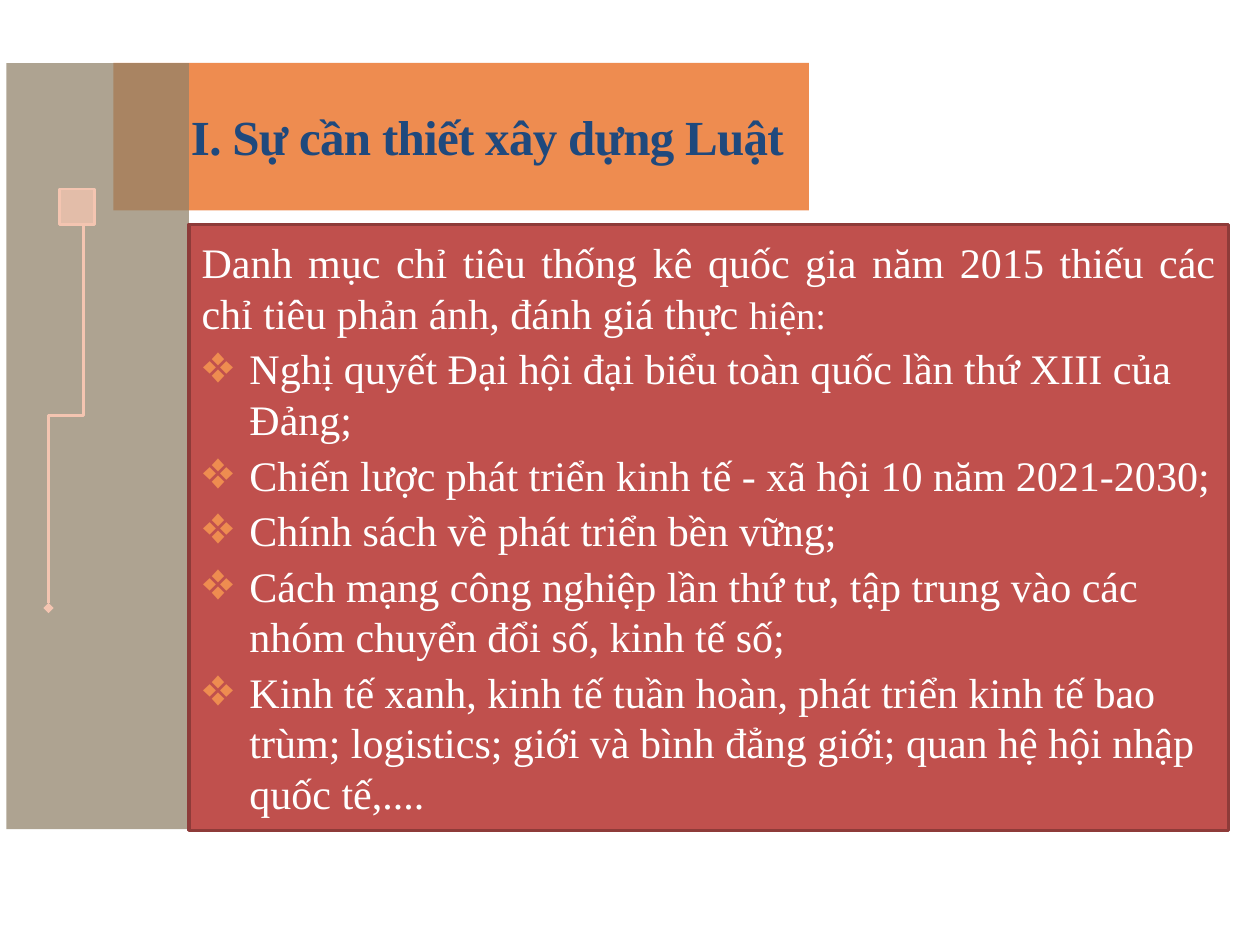
from lxml import etree
from pptx import Presentation
from pptx.dml.color import RGBColor
from pptx.enum.shapes import MSO_CONNECTOR, MSO_SHAPE
from pptx.enum.text import MSO_ANCHOR, MSO_AUTO_SIZE, PP_ALIGN
from pptx.oxml.ns import qn
from pptx.util import Inches, Pt

RECT, ELBOW = MSO_SHAPE.RECTANGLE, MSO_CONNECTOR.ELBOW
MIDDLE, NO_FIT = MSO_ANCHOR.MIDDLE, MSO_AUTO_SIZE.NONE
LEFT, RIGHT, JUSTIFY = PP_ALIGN.LEFT, PP_ALIGN.RIGHT, PP_ALIGN.JUSTIFY

COLORS = {
    "orange": "EE8C50",
    "taupe": "908269",
    "peach": "F4C5B1",
    "red": "C0504D",
    "dark_red": "8E3B39",
    "navy": "1F497D",
    "white": "FFFFFF",
}
FONT = "Times New Roman"
INDENT = 0.38

TITLE = "I. Sự cần thiết xây dựng Luật "
INTRO = [
    ("Danh mục chỉ tiêu thống kê quốc gia năm 2015 thiếu các chỉ tiêu "
     "phản ánh, đánh giá thực ", 24),
    ("hiện:", 22),
]
ITEMS = [
    "Nghị quyết Đại hội đại biểu toàn quốc lần thứ XIII của Đảng;",
    "Chiến lược phát triển kinh tế - xã hội 10 năm 2021-2030;",
    "Chính sách về phát triển bền vững;",
    "Cách mạng công nghiệp lần thứ tư, tập trung vào các nhóm chuyển đổi số, "
    "kinh tế số;",
    "Kinh tế xanh, kinh tế tuần hoàn, phát triển kinh tế bao trùm; logistics; "
    "giới và bình đẳng giới; quan hệ hội nhập quốc tế,....",
]


def rgb(name):
    return RGBColor.from_string(COLORS[name])


def add_xml(parent, tag, **attrs):
    return etree.SubElement(parent, qn(tag), attrs)


class SlideBuilder:
    def __init__(self, slide):
        self.s = slide

    def paint(self, sp, fill, line=None, width=1.5):
        sp.fill.solid()
        sp.fill.fore_color.rgb = rgb(fill)
        if line:
            sp.line.color.rgb = rgb(line)
            sp.line.width = Pt(width)
        else:
            sp.line.fill.background()

    def rect(self, box, fill, line=None, opacity=100):
        sp = self.s.shapes.add_shape(RECT, *map(Inches, box))
        sp.shadow.inherit = False
        self.paint(sp, fill, line)
        if opacity < 100:
            color = sp.fill._xPr.find(qn("a:solidFill"))[0]
            add_xml(color, "a:alpha", val=str(opacity * 1000))

    def elbow(self, box, color, width=1.5):
        x, y, w, h = box
        line = self.s.shapes.add_connector(
            ELBOW, Inches(x), Inches(y), Inches(x + w), Inches(y + h))
        line.line.color.rgb = rgb(color)
        line.line.width = Pt(width)
        sp_pr = line._element.spPr
        sp_pr.find(qn("a:xfrm")).set("rot", str(90 * 60000))
        add_xml(sp_pr.find(qn("a:ln")), "a:tailEnd", type="diamond")
        add_xml(sp_pr, "a:effectLst")

    def placeholder(self, sp, box):
        self.s.shapes._spTree.append(sp._element)
        sp.left, sp.top, sp.width, sp.height = map(Inches, box)
        tf = sp.text_frame
        tf.word_wrap = True
        tf.auto_size = NO_FIT
        tf.vertical_anchor = MIDDLE
        return tf

    def run(self, p, text, size, color, bold=False):
        r = p.add_run()
        r.text = text
        r.font.name = FONT
        r.font.size = Pt(size)
        r.font.bold = bold
        r.font.color.rgb = rgb(color)
        return r

    def title(self, box, text):
        tf = self.placeholder(self.s.shapes.title, box)
        tf.margin_left = tf.margin_right = Inches(0.1)
        tf.margin_top = tf.margin_bottom = Inches(0.1)
        p = tf.paragraphs[0]
        p.alignment = RIGHT
        r = self.run(p, text, 28, "navy", bold=True)
        r.font._element.set("spc", "-40")

    def body(self, box, intro, items):
        sp = self.s.placeholders[1]
        tf = self.placeholder(sp, box)
        self.paint(sp, "red", "dark_red", 2)
        p = tf.paragraphs[0]
        p.alignment = JUSTIFY
        p.space_before = Pt(6)
        self.bullet(p, None)
        for text, size in intro:
            self.run(p, text, size, "white")
        for item in items:
            p = tf.add_paragraph()
            p.alignment = LEFT
            p.space_before = Pt(3)
            self.bullet(p, "❖")
            self.run(p, item, 24, "white")

    def bullet(self, p, char):
        p_pr = p._p.get_or_add_pPr()
        indent = Inches(INDENT) if char else 0
        p_pr.set("marL", str(indent))
        p_pr.set("indent", str(-indent))
        if char:
            color = add_xml(p_pr, "a:buClr")
            add_xml(color, "a:srgbClr", val=COLORS["orange"])
            add_xml(p_pr, "a:buFont", typeface=FONT)
            add_xml(p_pr, "a:buChar", char=char)
        else:
            add_xml(p_pr, "a:buNone")


def main():
    prs = Presentation()
    prs.slide_width, prs.slide_height = Inches(10), Inches(7.5)
    b = SlideBuilder(prs.slides.add_slide(prs.slide_layouts[1]))
    b.rect((0.9, 0.5, 5.52, 1.17), "orange")
    b.rect((0.05, 0.5, 1.45, 6.08), "taupe", opacity=73)
    b.title((1.38, 0.5, 5.03, 1.16), TITLE)
    b.elbow((-1, 3.16, 3.05, 0.28), "peach")
    b.rect((0.47, 1.5, 0.28, 0.28), "peach", line="peach", opacity=77)
    b.body((1.5, 1.78, 8.25, 4.81), INTRO, ITEMS)
    prs.save("out.pptx")


if __name__ == "__main__":
    main()
